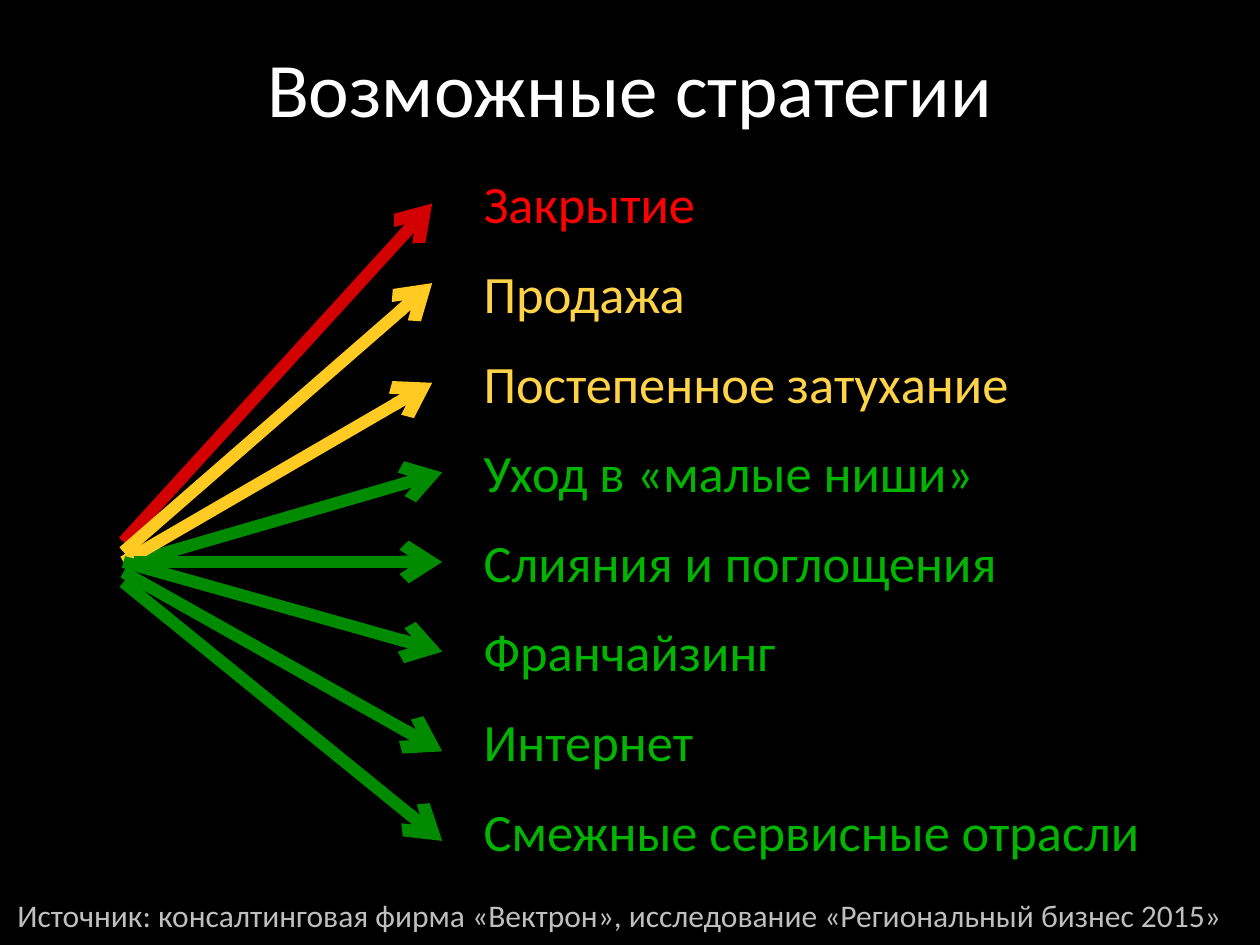
from collections import namedtuple
from dataclasses import dataclass

from lxml import etree
from pptx import Presentation
from pptx import util as u
from pptx.dml.color import RGBColor
from pptx.enum import text
from pptx.enum import shapes
from pptx.oxml.ns import qn

Box = namedtuple("Box", "left top width height")
Strategy = namedtuple("Strategy", "label tone tail_shift tail_drop head_drop")


@dataclass(frozen=True)
class Theme:
    font: str = "Calibri"
    background: str = "000000"
    title: str = "FFFFFF"
    source: str = "BFBFBF"
    title_size: int = 44
    label_size: int = 30
    source_size: int = 18
    arrow_width: int = 7


THEME = Theme()
LABEL_COLOURS = {"exit": "FF0000", "fade": "FFD347", "grow": "00B400"}
ARROW_COLOURS = {"exit": "D20000", "fade": "FFCA21", "grow": "008A00"}
STEP = 0.08

STRATEGIES = [
    Strategy("Закрытие", "exit", 0, -2, 0),
    Strategy("Продажа", "fade", 0, -1, -1),
    Strategy("Постепенное затухание", "fade", 0, 0, 0),
    Strategy("Уход в «малые ниши»", "grow", 1, 0, 0),
    Strategy("Слияния и поглощения", "grow", 1, 0, 0),
    Strategy("Франчайзинг", "grow", 0, 0, 0),
    Strategy("Интернет", "grow", 0, 1, 1),
    Strategy("Смежные сервисные отрасли", "grow", 0, 2, 1),
]
ARROW_ORDER = [3, 2, 0, 5, 6, 7, 4, 1]
HUB_ROW = 4


def apply(target, formats):
    for name, value in formats.items():
        setattr(target, name, value)


def write(shape, words, size, colour, align, frame_formats):
    apply(shape.text_frame, frame_formats)
    paragraph = shape.text_frame.paragraphs[0]
    paragraph.alignment = align
    run = paragraph.add_run()
    run.text = words
    apply(run.font, {"name": THEME.font, "size": u.Pt(size)})
    run.font.color.rgb = RGBColor.from_string(colour)


def place_title(slide, box, words):
    title = slide.shapes.title
    apply(title, {side: u.Inches(value) for side, value in box._asdict().items()})
    write(title, words, THEME.title_size, THEME.title, text.PP_ALIGN.CENTER,
          {"vertical_anchor": text.MSO_ANCHOR.MIDDLE, "word_wrap": True})


def place_text(slide, box, words, size, colour, wrap=True):
    label = slide.shapes.add_textbox(*map(u.Inches, box))
    write(label, words, size, colour, text.PP_ALIGN.LEFT,
          {"word_wrap": wrap, "auto_size": text.MSO_AUTO_SIZE.SHAPE_TO_FIT_TEXT})


def place_arrow(slide, tail, head, colour):
    arrow = slide.shapes.add_connector(
        shapes.MSO_CONNECTOR.STRAIGHT, *map(u.Inches, (*tail, *head)))
    arrow.line.width = u.Pt(THEME.arrow_width)
    arrow.line.color.rgb = RGBColor.from_string(colour)
    etree.SubElement(arrow.line._get_or_add_ln(), qn("a:tailEnd"), type="arrow")
    etree.SubElement(arrow._element.spPr, qn("a:effectLst"))


def place_arrows(slide, box):
    row_height = box.height / len(STRATEGIES)

    def row_middle(row):
        return box.top + (row + 0.5) * row_height

    for row in ARROW_ORDER:
        strategy = STRATEGIES[row]
        head_shift = 1 if strategy.tone == "grow" else 0
        tail = (box.left + strategy.tail_shift * STEP,
                row_middle(HUB_ROW) + strategy.tail_drop * STEP)
        head = (box.left + box.width + head_shift * STEP,
                row_middle(row) + strategy.head_drop * STEP)
        place_arrow(slide, tail, head, ARROW_COLOURS[strategy.tone])


def place_labels(slide, box):
    row_height = box.height / len(STRATEGIES)
    label_height = 0.61
    for row, strategy in enumerate(STRATEGIES):
        top = box.top + (row + 0.5) * row_height - label_height / 2
        place_text(slide, Box(box.left, top, box.width, label_height),
                   strategy.label, THEME.label_size, LABEL_COLOURS[strategy.tone])


def main():
    deck = Presentation()
    apply(deck, {"slide_width": u.Inches(10), "slide_height": u.Inches(7.5)})
    slide = deck.slides.add_slide(deck.slide_layouts.get_by_name("Title Only"))
    slide.background.fill.solid()
    slide.background.fill.fore_color.rgb = RGBColor.from_string(THEME.background)

    rows_top, rows_height = 1.26, 5.69
    place_title(slide, Box(0.5, 0.06, 9, 1.25), "Возможные стратегии")
    place_arrows(slide, Box(0.98, rows_top, 2.45, rows_height))
    place_labels(slide, Box(3.74, rows_top, 6.06, rows_height))
    place_text(
        slide, Box(0.04, 7.06, 9.83, 0.4),
        "Источник: консалтинговая фирма «Вектрон», исследование «Региональный бизнес 2015»",
        THEME.source_size, THEME.source, wrap=False)
    deck.save("out.pptx")


if __name__ == "__main__":
    main()
